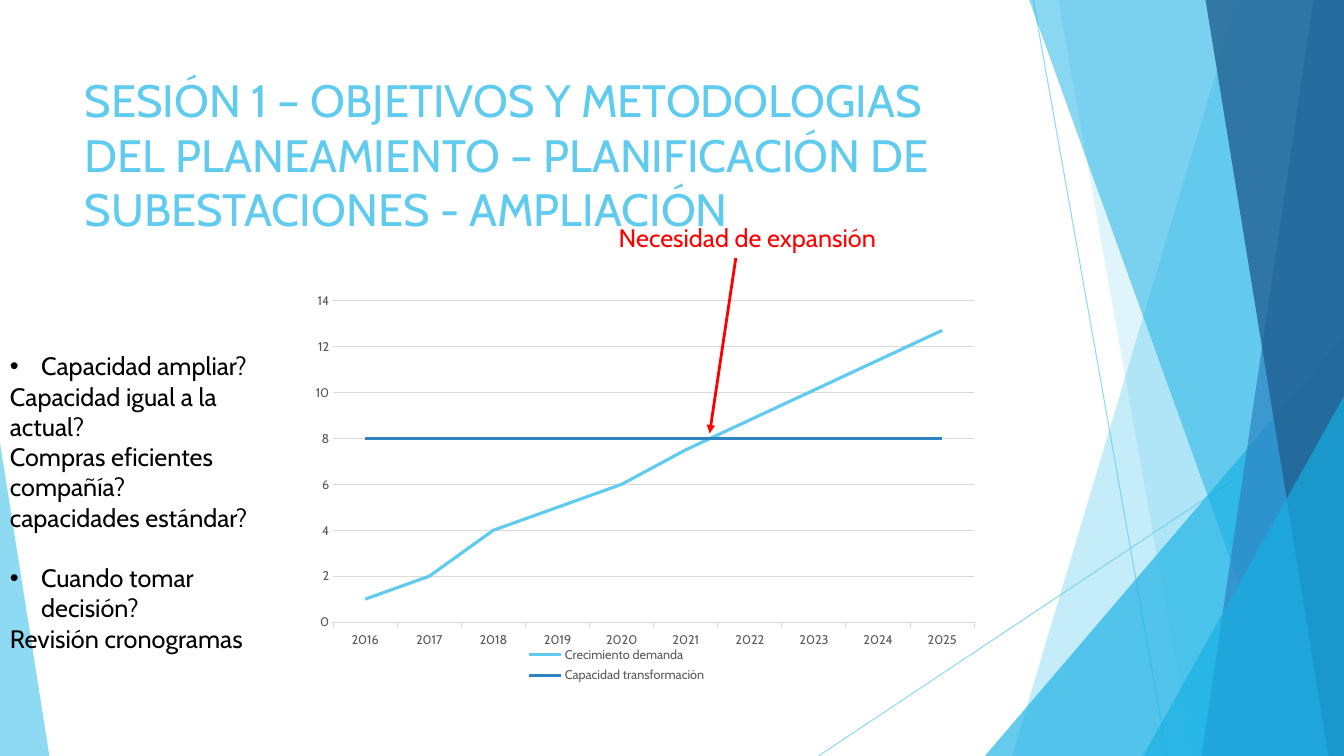
from dataclasses import dataclass

from lxml import etree
from pptx import Presentation
from pptx.chart.data import CategoryChartData
from pptx.dml.color import RGBColor
from pptx.enum.chart import XL_CHART_TYPE, XL_LEGEND_POSITION, XL_TICK_MARK
from pptx.enum.shapes import MSO_CONNECTOR, MSO_SHAPE
from pptx.enum.text import MSO_ANCHOR, PP_ALIGN
from pptx.oxml import parse_xml
from pptx.oxml.ns import nsdecls, qn
from pptx.util import Emu, Inches, Pt

LINE_CHART = XL_CHART_TYPE.LINE
LEGEND_RIGHT = XL_LEGEND_POSITION.RIGHT
TICK_OUT, TICK_NONE = XL_TICK_MARK.OUTSIDE, XL_TICK_MARK.NONE
STRAIGHT = MSO_CONNECTOR.STRAIGHT
TRIANGLE = MSO_SHAPE.ISOSCELES_TRIANGLE
TOP, LEFT = MSO_ANCHOR.TOP, PP_ALIGN.LEFT

SLIDE_WIDTH, SLIDE_HEIGHT = Inches(13.333), Inches(7.5)


@dataclass(frozen=True)
class Theme:
    font: str = "Cabin"
    sky: str = "5FCBEF"
    cyan: str = "17B0E4"
    blue: str = "2E83C3"
    navy: str = "226292"
    red: str = "FF0000"
    ink: str = "000000"
    label: str = "595959"
    grid: str = "D9D9D9"
    title_size: float = 32.4
    body_size: float = 18
    chart_size: float = 9


THEME = Theme()


@dataclass(frozen=True)
class Area:
    """A box in percent of the slide's width and height."""
    left: float
    top: float
    width: float
    height: float

    def place(self) -> tuple[Emu, Emu, Emu, Emu]:
        return across(self.left), down(self.top), across(self.width), down(self.height)


@dataclass(frozen=True)
class Ray:
    start: tuple[float, float]
    end: tuple[float, float]
    color: str
    weight: float
    opacity: int = 100
    arrow: bool = False


@dataclass(frozen=True)
class Facet:
    """A full-height band from a slanted left side to the right slide edge."""
    top_left: float
    bottom_left: float
    color: str
    opacity: int


@dataclass(frozen=True)
class Wedge:
    """A right triangle standing on the bottom edge, apex at 0 (left) or 1 (right)."""
    left: float
    top: float
    width: float
    apex: int
    color: str
    opacity: int


@dataclass(frozen=True)
class Entry:
    text: str
    color: str = THEME.ink
    bullet: bool = False
    space_before: float = 0


@dataclass(frozen=True)
class Trend:
    name: str
    values: tuple[float, ...]
    color: str


RAYS = (
    Ray((76.88, 0), (86.85, 100), THEME.sky, 0.75, 70),
    Ray((100, 53.73), (60.9, 100), THEME.sky, 0.75, 70),
)
BACKDROP = (
    Facet(92.1, 75.3, THEME.sky, 36),
    Facet(78.75, 88.73, THEME.sky, 20),
    Wedge(73.28, 44.4, 26.72, 1, THEME.cyan, 66),
    Facet(76.58, 96.83, THEME.cyan, 50),
    Facet(97.73, 89.4, THEME.blue, 70),
    Facet(89.7, 98.85, THEME.navy, 80),
    Wedge(85.05, 52.4, 14.95, 1, THEME.cyan, 66),
    Wedge(0, 58.53, 3.68, 0, THEME.sky, 70),
)
TITLE = ("SESIÓN 1 – OBJETIVOS Y METODOLOGIAS DEL PLANEAMIENTO – "
         "PLANIFICACIÓN DE SUBESTACIONES - AMPLIACIÓN")
QUESTIONS = (
    Entry("Capacidad ampliar?", bullet=True),
    Entry("Capacidad igual a la actual?"),
    Entry("Compras eficientes compañía?"),
    Entry("capacidades estándar?"),
    Entry("Cuando tomar decisión?", bullet=True, space_before=21.6),
    Entry("Revisión cronogramas"),
)
CALLOUT = (Entry("Necesidad de expansión", THEME.red),)
CALLOUT_ARROW = Ray((54.75, 34.13), (52.8, 57.33), THEME.red, 2, arrow=True)
YEARS = [str(year) for year in range(2016, 2026)]
TRENDS = (
    Trend("Crecimiento demanda", (1, 2, 4, 5, 6, 7.5, 8.8, 10.1, 11.4, 12.7), THEME.sky),
    Trend("Capacidad transformación", (8,) * len(YEARS), THEME.blue),
)


def across(percent: float) -> Emu:
    return Emu(round(SLIDE_WIDTH * percent / 100))


def down(percent: float) -> Emu:
    return Emu(round(SLIDE_HEIGHT * percent / 100))


def rgb(color: str) -> RGBColor:
    return RGBColor.from_string(color)


def style_font(font, size: float, color: str) -> None:
    font.name, font.size = THEME.font, Pt(size)
    font.color.rgb = rgb(color)


def style_line(line, color: str, weight: float) -> None:
    line.color.rgb = rgb(color)
    line.width = Pt(weight)


def set_opacity(shape, opacity: int) -> None:
    color = next(shape.element.spPr.iter(qn("a:srgbClr")))
    etree.SubElement(color, qn("a:alpha"), val=str(opacity * 1000))


def draw_ray(page, ray: Ray) -> None:
    (x1, y1), (x2, y2) = ray.start, ray.end
    line = page.shapes.add_connector(STRAIGHT, across(x1), down(y1), across(x2), down(y2))
    style_line(line.line, ray.color, ray.weight)
    set_opacity(line, ray.opacity)
    if ray.arrow:
        etree.SubElement(line.element.spPr.find(qn("a:ln")), qn("a:tailEnd"), type="triangle")
    etree.SubElement(line.element.spPr, qn("a:effectLst"))


def draw_backdrop(page, item: Facet | Wedge) -> None:
    if isinstance(item, Facet):
        outline = page.shapes.build_freeform(across(item.top_left), 0)
        outline.add_line_segments([(SLIDE_WIDTH, 0), (SLIDE_WIDTH, SLIDE_HEIGHT),
                                   (across(item.bottom_left), SLIDE_HEIGHT)], close=True)
        shape = outline.convert_to_shape()
    else:
        area = Area(item.left, item.top, item.width, 100 - item.top)
        shape = page.shapes.add_shape(TRIANGLE, *area.place())
        shape.adjustments[0] = item.apex
    shape.shadow.inherit = False
    shape.fill.solid()
    shape.fill.fore_color.rgb = rgb(item.color)
    shape.line.fill.background()
    set_opacity(shape, item.opacity)


def write_title(page) -> None:
    title = page.shapes.title
    title.left, title.top, title.width, title.height = Area(5.55, 8.93, 70.5, 19.2).place()
    title.element.getparent().append(title.element)
    frame = title.text_frame
    frame.word_wrap, frame.vertical_anchor = True, TOP
    para = frame.paragraphs[0]
    para.alignment = LEFT
    span = para.add_run()
    span.text = TITLE
    style_font(span.font, THEME.title_size, THEME.sky)


def write_entries(page, area: Area, entries: tuple[Entry, ...]) -> None:
    frame = page.shapes.add_textbox(*area.place()).text_frame
    frame.word_wrap = True
    for index, entry in enumerate(entries):
        para = frame.add_paragraph() if index else frame.paragraphs[0]
        if entry.bullet:
            props = para._p.get_or_add_pPr()
            props.set("marL", str(Inches(0.31)))
            props.set("indent", str(-Inches(0.31)))
            etree.SubElement(props, qn("a:buFont"), typeface="Arial")
            etree.SubElement(props, qn("a:buChar"), char="•")
        if entry.space_before:
            para.space_before = Pt(entry.space_before)
        span = para.add_run()
        span.text = entry.text
        style_font(span.font, THEME.body_size, entry.color)


def manual_layout(left: float, top: float, width: float, height: float, inner: bool = False):
    """Build a chart layout from shares of the chart's size."""
    target = '<c:layoutTarget val="inner"/>' if inner else ""
    sizes = "".join(f'<c:{key} val="{value}"/>' for key, value in
                    zip("xywh", (left, top, width, height)))
    return parse_xml(f'<c:layout {nsdecls("c")}><c:manualLayout>{target}<c:xMode val="edge"/>'
                     f'<c:yMode val="edge"/>{sizes}</c:manualLayout></c:layout>')


def draw_chart(page, area: Area) -> None:
    data = CategoryChartData()
    data.categories = YEARS
    for trend in TRENDS:
        data.add_series(trend.name, trend.values)
    chart = page.shapes.add_chart(LINE_CHART, *area.place(), data).chart
    chart.has_title = False
    style_font(chart.font, THEME.chart_size, THEME.label)
    plot = chart.plots[0]
    plot.vary_by_categories = False
    for series, trend in zip(plot.series, TRENDS):
        series.smooth = False
        style_line(series.format.line, trend.color, 2.25)
    years, amounts = chart.category_axis, chart.value_axis
    years.major_tick_mark, amounts.major_tick_mark = TICK_OUT, TICK_NONE
    style_line(years.format.line, THEME.grid, 0.75)
    amounts.format.line.fill.background()
    amounts.minimum_scale, amounts.maximum_scale, amounts.major_unit = 0, 14, 2
    style_line(amounts.major_gridlines.format.line, THEME.grid, 0.75)
    for labelled in (years, amounts):
        style_font(labelled.tick_labels.font, THEME.chart_size, THEME.label)
    plot_area = plot._element.getparent()
    for old in plot_area.findall(qn("c:layout")):
        plot_area.remove(old)
    plot_area.insert(0, manual_layout(0.05, 0.04, 0.95, 0.79, inner=True))
    chart.has_legend = True
    legend = chart.legend
    legend.position, legend.include_in_layout = LEGEND_RIGHT, False
    style_font(legend.font, THEME.chart_size, THEME.label)
    for old in legend._element.findall(qn("c:layout")):
        legend._element.remove(old)
    legend._element.find(qn("c:legendPos")).addnext(manual_layout(0.32, 0.88, 0.3, 0.11))


def main() -> None:
    deck = Presentation()
    deck.slide_width, deck.slide_height = SLIDE_WIDTH, SLIDE_HEIGHT
    page = deck.slides.add_slide(deck.slide_layouts.get_by_name("Title Only"))
    for ray in RAYS:
        draw_ray(page, ray)
    for item in BACKDROP:
        draw_backdrop(page, item)
    write_title(page)
    draw_chart(page, Area(22.28, 37.6, 50.25, 53.87))
    draw_ray(page, CALLOUT_ARROW)
    write_entries(page, Area(45.3, 28.8, 21.83, 5.33), CALLOUT)
    write_entries(page, Area(0, 45.73, 22.28, 49.87), QUESTIONS)
    deck.save("out.pptx")


if __name__ == "__main__":
    main()
